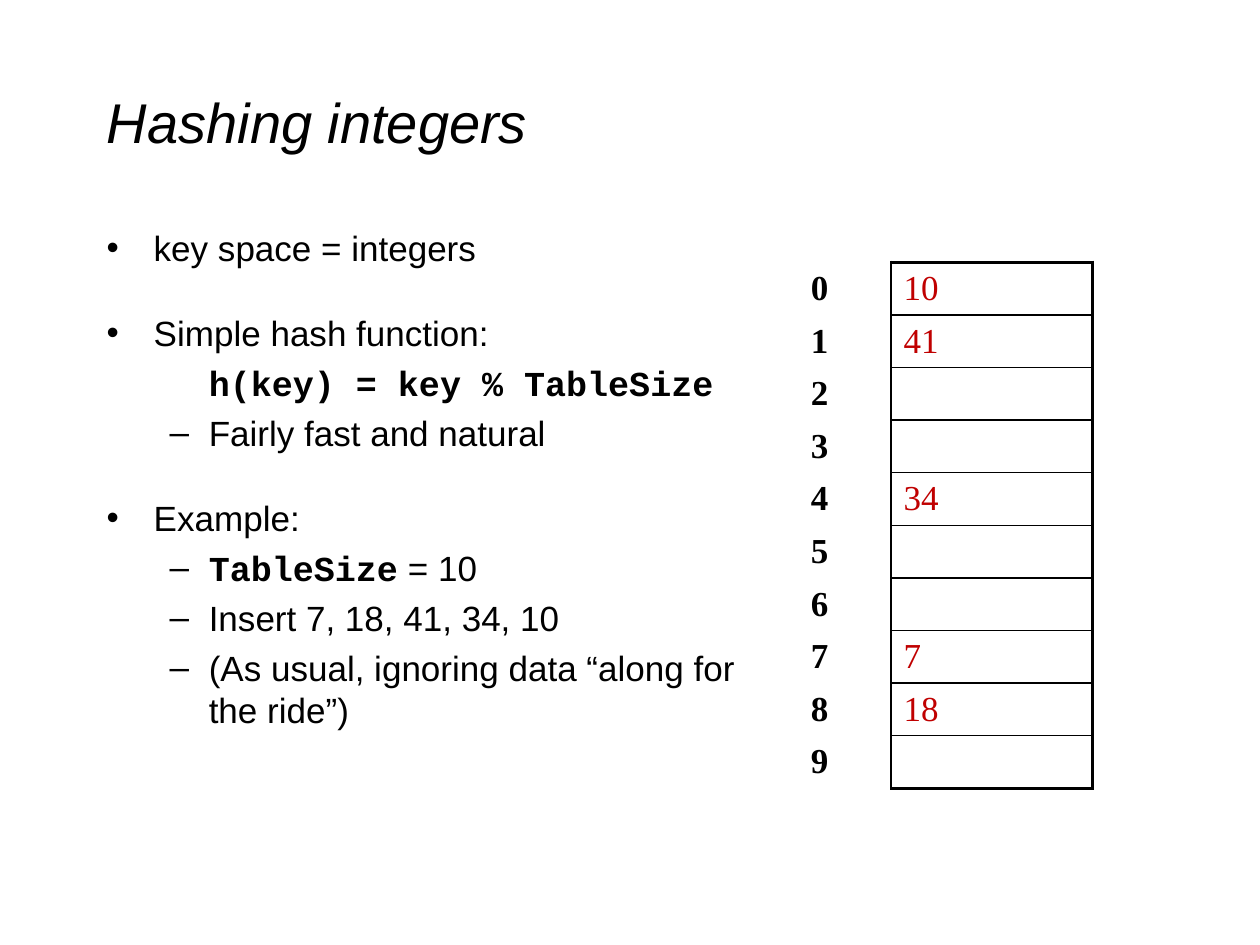
from lxml.etree import SubElement
from pptx import Presentation
from pptx.dml.color import RGBColor
from pptx.enum.text import MSO_ANCHOR, PP_ALIGN
from pptx.oxml.ns import qn
from pptx.util import Cm, Pt

BLACK = RGBColor(0x00, 0x00, 0x00)
RED = RGBColor(0xC0, 0x00, 0x00)
WHITE = RGBColor(0xFF, 0xFF, 0xFF)
SANS, MONO, SERIF = "Arial", "Courier New", "Times New Roman"

TABLE_SIZE = 10
KEYS = [7, 18, 41, 34, 10]
THIN, THICK = 1, 2.25
TIGHT, LOOSE = 4.6, 24.4  # space before a paragraph, in points

# Per outline level: text margin and hanging indent
LEVEL_INDENTS = [(Cm(0.95), Cm(-0.95)), (Cm(2.06), Cm(-0.79))]

# Level, bullet, space before, runs as (text, is code)
OUTLINE = [
    (0, "•", 0, [("key space = integers", False)]),
    (0, "•", LOOSE, [("Simple hash function:", False)]),
    (1, None, TIGHT, [("\t", False), ("h(key) = key % TableSize", True)]),
    (1, "–", TIGHT, [("Fairly fast and natural", False)]),
    (0, "•", LOOSE, [("Example:", False)]),
    (1, "–", TIGHT, [("TableSize", True), (" = 10", False)]),
    (1, "–", TIGHT, [("Insert 7, 18, 41, 34, 10", False)]),
    (1, "–", TIGHT, [("(As usual, ignoring data “along for the ride”)", False)]),
]


class SlideBuilder:
    def __init__(self, page, text_size=20, title_size=32):
        self.page = page
        self.text_size = text_size
        self.title_size = title_size

    def add_span(self, para, text, font=SANS, color=BLACK, bold=False,
                 italic=False, size=None):
        span = para.add_run()
        span.text = text
        span.font.name = font
        span.font.size = Pt(size or self.text_size)
        span.font.bold = bold
        span.font.italic = italic
        span.font.color.rgb = color

    def title(self, text, left, top, width, height):
        box = self.page.shapes.title
        box.left, box.top, box.width, box.height = left, top, width, height
        box.text_frame.vertical_anchor = MSO_ANCHOR.MIDDLE
        para = box.text_frame.paragraphs[0]
        para.alignment = PP_ALIGN.LEFT
        self.add_span(para, text, italic=True, size=self.title_size)

    def outline(self, items, left, top, width, height):
        frame = self.page.shapes.add_textbox(left, top, width, height).text_frame
        frame.word_wrap = True
        for index, (level, bullet, gap, spans) in enumerate(items):
            para = frame.add_paragraph() if index else frame.paragraphs[0]
            para.level = level
            para.space_before = Pt(gap)
            self.set_bullet(para, bullet, *LEVEL_INDENTS[level])
            for text, is_code in spans:
                self.add_span(para, text, MONO if is_code else SANS, bold=is_code)

    def set_bullet(self, para, bullet, margin, indent):
        properties = para._p.get_or_add_pPr()
        properties.set("marL", str(margin))
        properties.set("indent", str(indent))
        if bullet:
            SubElement(properties, qn("a:buFont"), typeface=SANS)
            SubElement(properties, qn("a:buChar"), char=bullet)
        else:
            SubElement(properties, qn("a:buNone"))

    def hash_table(self, slots, left, top, column_widths, row_height):
        """Draw slot numbers in a plain column beside a ruled column of keys."""
        table = self.page.shapes.add_table(
            len(slots), 2, left, top, sum(column_widths), row_height * len(slots)
        ).table
        table.first_row = table.horz_banding = False
        for column, width in zip(table.columns, column_widths):
            column.width = width
        last = len(slots) - 1
        for row, key in enumerate(slots):
            table.rows[row].height = row_height
            number_cell, key_cell = table.cell(row, 0), table.cell(row, 1)
            self.fill_cell(number_cell, row, BLACK, True, R=THIN)
            self.fill_cell(key_cell, key, RED, False, L=THIN, R=THICK,
                           T=THIN if row else THICK,
                           B=THICK if row == last else THIN)

    def fill_cell(self, cell, value, color, bold, **borders):
        properties = cell._tc.get_or_add_tcPr()
        for side in "LRTB":
            width = borders.get(side, 0)
            line = SubElement(properties, qn(f"a:ln{side}"), w=str(Pt(width)))
            if width:
                fill = SubElement(line, qn("a:solidFill"))
                SubElement(fill, qn("a:srgbClr"), val=str(BLACK))
            else:
                SubElement(line, qn("a:noFill"))
        cell.fill.background()
        cell.vertical_anchor = MSO_ANCHOR.MIDDLE
        if value is not None:
            para = cell.text_frame.paragraphs[0]
            self.add_span(para, str(value), SERIF, color, bold)


def main():
    deck = Presentation()
    deck.slide_width, deck.slide_height = Cm(25.4), Cm(19.05)
    page = deck.slides.add_slide(deck.slide_layouts[5])
    page.background.fill.solid()
    page.background.fill.fore_color.rgb = WHITE

    slots = [None] * TABLE_SIZE
    for key in KEYS:
        slots[key % TABLE_SIZE] = key

    builder = SlideBuilder(page)
    builder.title("Hashing integers", Cm(1.9), Cm(0.85), Cm(21.6), Cm(3.18))
    builder.hash_table(slots, Cm(16.09), Cm(5.29), [Cm(1.87), Cm(4.06)], Cm(1.06))
    builder.outline(OUTLINE, Cm(1.9), Cm(4.45), Cm(13.55), Cm(13.12))
    deck.save("out.pptx")


if __name__ == "__main__":
    main()
